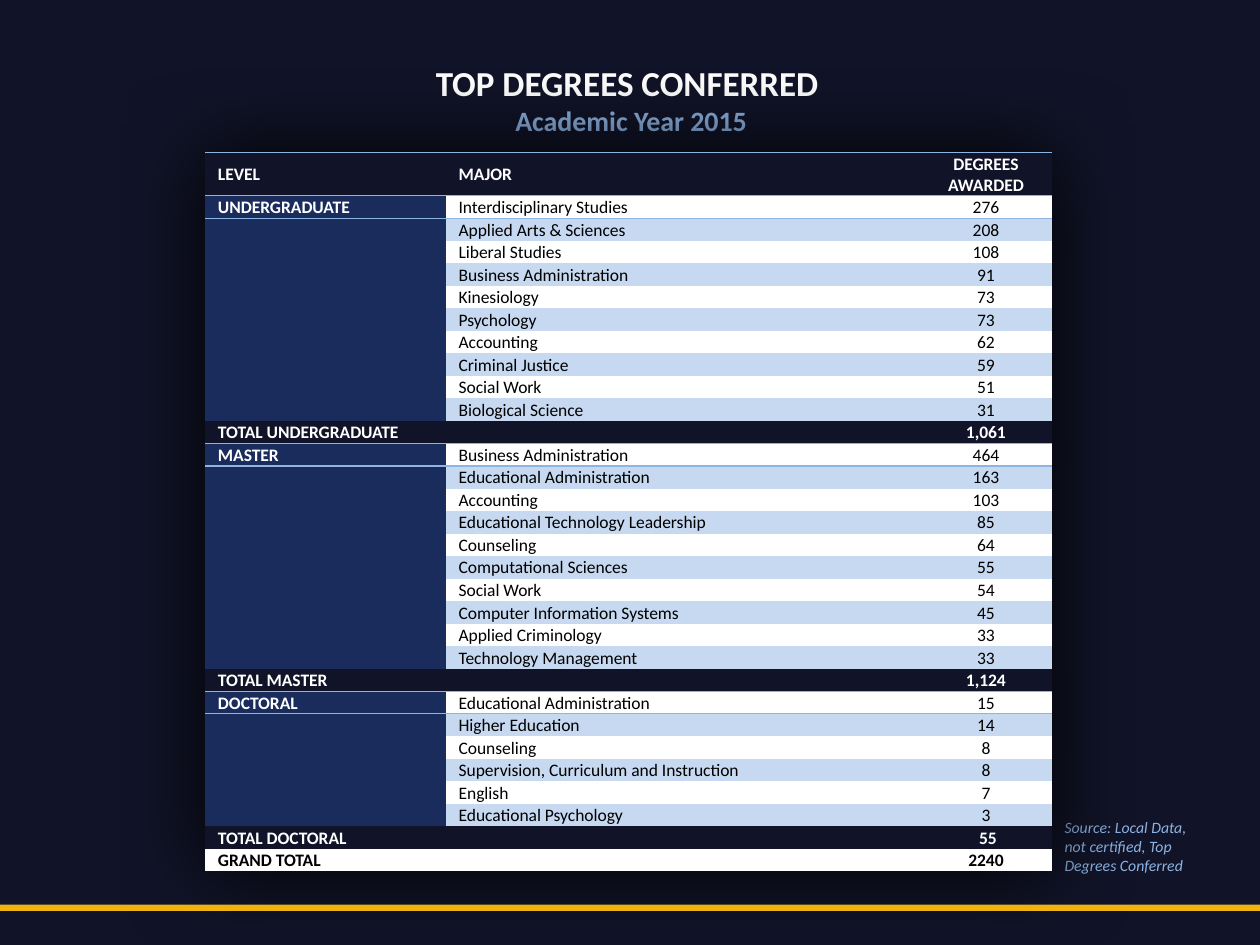
"""Build a slide with a table of the top degrees conferred in 2015."""
import dataclasses
import typing

import lxml.etree
import pptx
import pptx.dml.color
import pptx.enum.shapes
import pptx.enum.text
import pptx.oxml
import pptx.oxml.ns
import pptx.util

Inches = pptx.util.Inches
Align = pptx.enum.text.PP_ALIGN
Anchor = pptx.enum.text.MSO_ANCHOR

COLORS = {
    "night": "111428",
    "navy": "1A2C5C",
    "sky": "8EB4E3",
    "pale": "C6D9F1",
    "white": "FFFFFF",
    "black": "000000",
    "gold": "EEB211",
}
FONT = "Calibri"
PLAIN_TABLE_STYLE = "{2D5ABB26-0587-4C30-8999-92F81FD0307C}"
COLUMN_WIDTHS = (1.91, 3.76, 1.05)
TABLE_SHADOW = (
    f'<a:effectLst {pptx.oxml.ns.nsdecls("a")}>'
    '<a:outerShdw blurRad="635000" algn="ctr" rotWithShape="0">'
    '<a:srgbClr val="000000"/></a:outerShdw></a:effectLst>'
)


@dataclasses.dataclass
class Level:
    name: str
    total: str
    majors: list[tuple[str, str]]


@dataclasses.dataclass
class Row:
    texts: tuple[str, str, str]
    fills: tuple[str, str, str]
    inks: tuple[str, str, str]
    bolds: tuple[bool, bool, bool] = (True, True, True)
    borders: tuple[str, ...] = ()


LEVELS = [
    Level("UNDERGRADUATE", "1,061", [
        ("Interdisciplinary Studies", "276"),
        ("Applied Arts & Sciences", "208"),
        ("Liberal Studies", "108"),
        ("Business Administration", "91"),
        ("Kinesiology", "73"),
        ("Psychology", "73"),
        ("Accounting", "62"),
        ("Criminal Justice", "59"),
        ("Social Work", "51"),
        ("Biological Science", "31"),
    ]),
    Level("MASTER", "1,124", [
        ("Business Administration", "464"),
        ("Educational Administration", "163"),
        ("Accounting", "103"),
        ("Educational Technology Leadership", "85"),
        ("Counseling", "64"),
        ("Computational Sciences", "55"),
        ("Social Work", "54"),
        ("Computer Information Systems", "45"),
        ("Applied Criminology", "33"),
        ("Technology Management", "33"),
    ]),
    Level("DOCTORAL", "\u00a055", [
        ("Educational Administration", "15"),
        ("Higher Education", "14"),
        ("Counseling", "8"),
        ("Supervision, Curriculum and Instruction", "8"),
        ("English", "7"),
        ("Educational Psychology", "3"),
    ]),
]


def rgb(name: str) -> pptx.dml.color.RGBColor:
    return pptx.dml.color.RGBColor.from_string(COLORS[name])


def set_attributes(target: typing.Any, values: dict[str, typing.Any]) -> None:
    for name, value in values.items():
        setattr(target, name, value)


def write(paragraph: typing.Any, text: str, size: float, color: str, **styles: bool) -> None:
    run = paragraph.add_run()
    run.text = text
    set_attributes(run.font, {"name": FONT, "size": pptx.util.Pt(size), **styles})
    run.font.color.rgb = rgb(color)


def solid_row(texts: tuple[str, str, str], fill: str, ink: str, borders: tuple[str, ...] = ()) -> Row:
    return Row(texts, (fill,) * 3, (ink,) * 3, borders=borders)


def table_rows() -> list[Row]:
    rows = [solid_row(("LEVEL", "MAJOR", "DEGREES AWARDED"), "night", "white", ("lnT", "lnB"))]
    for level in LEVELS:
        for index, (major, degrees) in enumerate(level.majors):
            stripe = "pale" if index % 2 else "white"
            rows.append(Row(
                ("" if index else level.name, major, degrees),
                ("navy", stripe, stripe),
                ("white", "black", "black"),
                (True, False, False),
                () if index else ("lnT",),
            ))
        borders = () if level is LEVELS[-1] else ("lnB",)
        rows.append(solid_row((f"TOTAL {level.name}", "", level.total), "night", "white", borders))
    rows.append(solid_row(("GRAND TOTAL", "", "2240"), "white", "black"))
    return rows


def add_borders(cell: typing.Any, edges: tuple[str, ...]) -> None:
    properties = cell._tc.get_or_add_tcPr()
    for position, edge in enumerate(edges):
        properties.insert(position, pptx.oxml.parse_xml(
            f'<a:{edge} {pptx.oxml.ns.nsdecls("a")} w="9525"><a:solidFill>'
            f'<a:srgbClr val="{COLORS["sky"]}"/></a:solidFill></a:{edge}>'
        ))


def fill_cell(cell: typing.Any, row: Row, column: int) -> None:
    centered = column == 2
    set_attributes(cell, {
        "vertical_anchor": Anchor.MIDDLE,
        "margin_left": Inches(0.01 if centered else 0.1),
        "margin_top": Inches(0.01),
        "margin_right": Inches(0.01 if centered else 0),
        "margin_bottom": 0,
    })
    cell.fill.solid()
    cell.fill.fore_color.rgb = rgb(row.fills[column])
    paragraph = cell.text_frame.paragraphs[0]
    if centered:
        paragraph.alignment = Align.CENTER
    if row.texts[column]:
        write(paragraph, row.texts[column], 10, row.inks[column], bold=row.bolds[column])
    else:
        lxml.etree.SubElement(paragraph._p, pptx.oxml.ns.qn("a:endParaRPr"), sz="1000")
    add_borders(cell, row.borders)


def add_degree_table(slide: typing.Any) -> None:
    rows = table_rows()
    frame = slide.shapes.add_table(
        len(rows), len(COLUMN_WIDTHS), Inches(1.63), Inches(1.21), Inches(6.72), Inches(5.55)
    )
    table = frame.table
    set_attributes(table, {"first_row": False, "horz_banding": False})
    properties = table._tbl.tblPr
    properties.find(pptx.oxml.ns.qn("a:tableStyleId")).text = PLAIN_TABLE_STYLE
    properties.insert(0, pptx.oxml.parse_xml(TABLE_SHADOW))
    for column, width in zip(table.columns, COLUMN_WIDTHS):
        column.width = Inches(width)
    for row_index, row in enumerate(rows):
        for column_index in range(len(COLUMN_WIDTHS)):
            fill_cell(table.cell(row_index, column_index), row, column_index)


def add_title(slide: typing.Any) -> None:
    title = slide.shapes.title
    set_attributes(title, {
        "left": Inches(1.73), "top": Inches(0.44), "width": Inches(6.56), "height": Inches(1.28),
    })
    frame = title.text_frame
    set_attributes(frame, {
        "word_wrap": True, "vertical_anchor": Anchor.TOP, "auto_size": pptx.enum.text.MSO_AUTO_SIZE.NONE,
    })
    lines = (("TOP DEGREES CONFERRED ", 20, "white"), ("Academic Year 2015", 16, "sky"))
    for index, (text, size, color) in enumerate(lines):
        paragraph = frame.add_paragraph() if index else frame.paragraphs[0]
        paragraph.alignment = Align.CENTER
        write(paragraph, text, size, color, bold=True)


def add_source_note(slide: typing.Any) -> None:
    note = slide.shapes.add_textbox(Inches(8.35), Inches(6.44), Inches(1.25), Inches(0.56))
    note.text_frame.word_wrap = True
    text = "Source: Local Data, not certified, Top Degrees Conferred"
    write(note.text_frame.paragraphs[0], text, 9, "sky", italic=True)


def add_gold_bar(slide: typing.Any) -> None:
    bar = slide.shapes.add_shape(
        pptx.enum.shapes.MSO_SHAPE.RECTANGLE, Inches(-0.09), Inches(7.18), Inches(10.09), Inches(0.05)
    )
    bar.shadow.inherit = False
    bar.fill.solid()
    bar.fill.fore_color.rgb = rgb("gold")
    bar.line.fill.background()


def main() -> None:
    presentation = pptx.Presentation()
    set_attributes(presentation, {"slide_width": Inches(10), "slide_height": Inches(7.5)})
    slide = presentation.slides.add_slide(presentation.slide_layouts[5])
    slide.background.fill.solid()
    slide.background.fill.fore_color.rgb = rgb("night")
    for draw in (add_title, add_source_note, add_degree_table, add_gold_bar):
        draw(slide)
    presentation.save("out.pptx")


if __name__ == "__main__":
    main()
